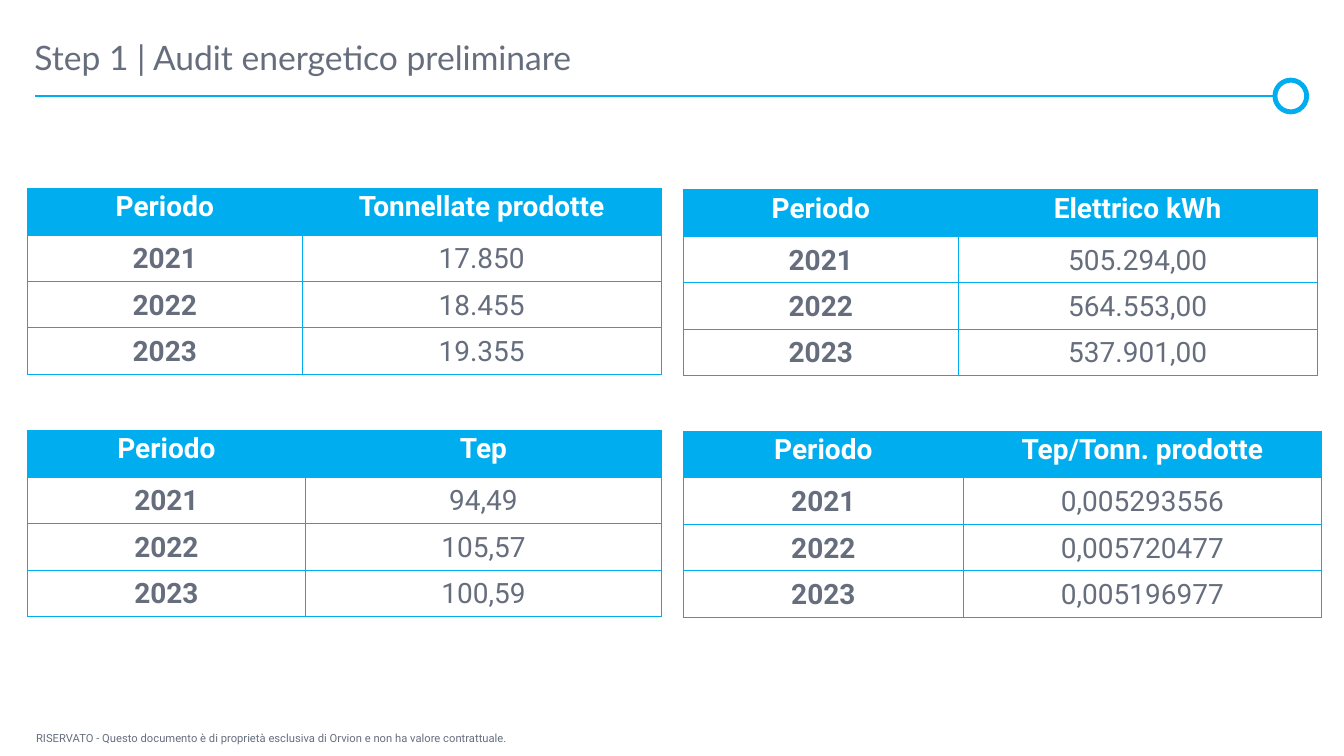
from lxml.etree import SubElement
from pptx import Presentation
from pptx.dml.color import RGBColor
from pptx.enum.shapes import MSO_CONNECTOR, MSO_SHAPE
from pptx.enum.text import MSO_ANCHOR as Anchor, PP_ALIGN as Align
from pptx.oxml.ns import qn
from pptx.util import Cm, Pt

TITLE = "Step 1 | Audit energetico preliminare"
FOOTER = ("RISERVATO - Questo documento è di proprietà esclusiva di Orvion "
          "e non ha valore contrattuale.")
PERIOD = "Periodo"
YEARS = ["2021", "2022", "2023"]
TABLES = [
    {"measure": "Tonnellate prodotte", "values": ["17.850", "18.455", "19.355"],
     "place": (0.69, 4.75), "columns": (6.93, 9.04)},
    {"measure": "Elettrico kWh", "values": ["505.294,00", "564.553,00", "537.901,00"],
     "place": (17.22, 4.78), "columns": (6.93, 9.04)},
    {"measure": "Tep", "values": ["94,49", "105,57", "100,59"],
     "place": (0.69, 10.85), "columns": (7.01, 8.97)},
    {"measure": "Tep/Tonn. prodotte", "values": ["0,005293556", "0,005720477", "0,005196977"],
     "place": (17.22, 10.87), "columns": (7.06, 9.02)},
]
ROW_HEIGHT = 1.17
RULE_LEFT, RULE_RIGHT, RULE_Y = 0.89, 32.13, 2.42
RING_SIZE = 0.8

BLUE = RGBColor(0x00, 0xAE, 0xEF)
GREY = RGBColor(0x66, 0x6E, 0x7E)
WHITE = RGBColor(0xFF, 0xFF, 0xFF)


def add_span(para, text, font, size, color, bold=False):
    span = para.add_run()
    span.text = text
    span.font.name = font
    span.font.size = Pt(size)
    span.font.bold = bold
    span.font.color.rgb = color


def add_text(page, left, top, width, height, text, font, size):
    box = page.shapes.add_textbox(Cm(left), Cm(top), Cm(width), Cm(height))
    box.text_frame.word_wrap = True
    para = box.text_frame.paragraphs[0]
    add_span(para, text, font, size, GREY)
    return box.text_frame, para


def add_borders(cell):
    properties = cell._tc.get_or_add_tcPr()
    for side in ("lnL", "lnR", "lnT", "lnB"):
        border = SubElement(properties, qn(f"a:{side}"), w=str(Pt(0.5)))
        fill = SubElement(border, qn("a:solidFill"))
        SubElement(fill, qn("a:srgbClr"), val=str(BLUE))


def fill_cell(cell, text, header, bold):
    add_borders(cell)
    cell.fill.solid()
    cell.fill.fore_color.rgb = BLUE if header else WHITE
    cell.margin_left = cell.margin_right = Cm(0.18)
    cell.margin_top = cell.margin_bottom = 0
    cell.vertical_anchor = Anchor.TOP if header else Anchor.MIDDLE
    para = cell.text_frame.paragraphs[0]
    para.alignment = Align.CENTER
    para.line_spacing = 1.07
    para.space_after = Pt(8)
    add_span(para, text, "Roboto", 20, WHITE if header else GREY, bold)


def add_year_table(page, measure, values, place, columns):
    rows = [(PERIOD, measure), *zip(YEARS, values)]
    left, top = place
    table = page.shapes.add_table(
        len(rows), len(columns), Cm(left), Cm(top),
        Cm(sum(columns)), Cm(ROW_HEIGHT * len(rows))).table
    table.first_row = table.horz_banding = False
    for column, width in zip(table.columns, columns):
        column.width = Cm(width)
    for row_index, row in enumerate(rows):
        table.rows[row_index].height = Cm(ROW_HEIGHT)
        for column_index, text in enumerate(row):
            header = row_index == 0
            fill_cell(table.cell(row_index, column_index), text, header,
                      header or column_index == 0)


def add_title_rule(page):
    rule = page.shapes.add_connector(
        MSO_CONNECTOR.STRAIGHT, Cm(RULE_LEFT), Cm(RULE_Y), Cm(RULE_RIGHT), Cm(RULE_Y))
    rule.line.color.rgb = BLUE
    rule.line.width = Pt(1.5)
    SubElement(rule._element.spPr, qn("a:effectLst"))
    ring = page.shapes.add_shape(
        MSO_SHAPE.OVAL, Cm(RULE_RIGHT), Cm(RULE_Y - RING_SIZE / 2),
        Cm(RING_SIZE), Cm(RING_SIZE))
    ring.shadow.inherit = False
    ring.fill.background()
    ring.line.color.rgb = BLUE
    ring.line.width = Pt(3.5)


def main():
    deck = Presentation()
    deck.slide_width, deck.slide_height = Cm(33.87), Cm(19.05)
    page = deck.slides.add_slide(deck.slide_layouts[6])
    add_title_rule(page)
    add_text(page, 0.66, 18.31, 17.4, 0.6, FOOTER, "Roboto", 8)
    frame, para = add_text(page, 0.87, 0.46, 30.94, 1.5, TITLE, "Lato", 24)
    frame.margin_left = frame.margin_right = frame.margin_top = frame.margin_bottom = 0
    frame.vertical_anchor = Anchor.BOTTOM
    para.line_spacing = 0.9
    for entry in TABLES:
        add_year_table(page, **entry)
    deck.save("out.pptx")


if __name__ == "__main__":
    main()
